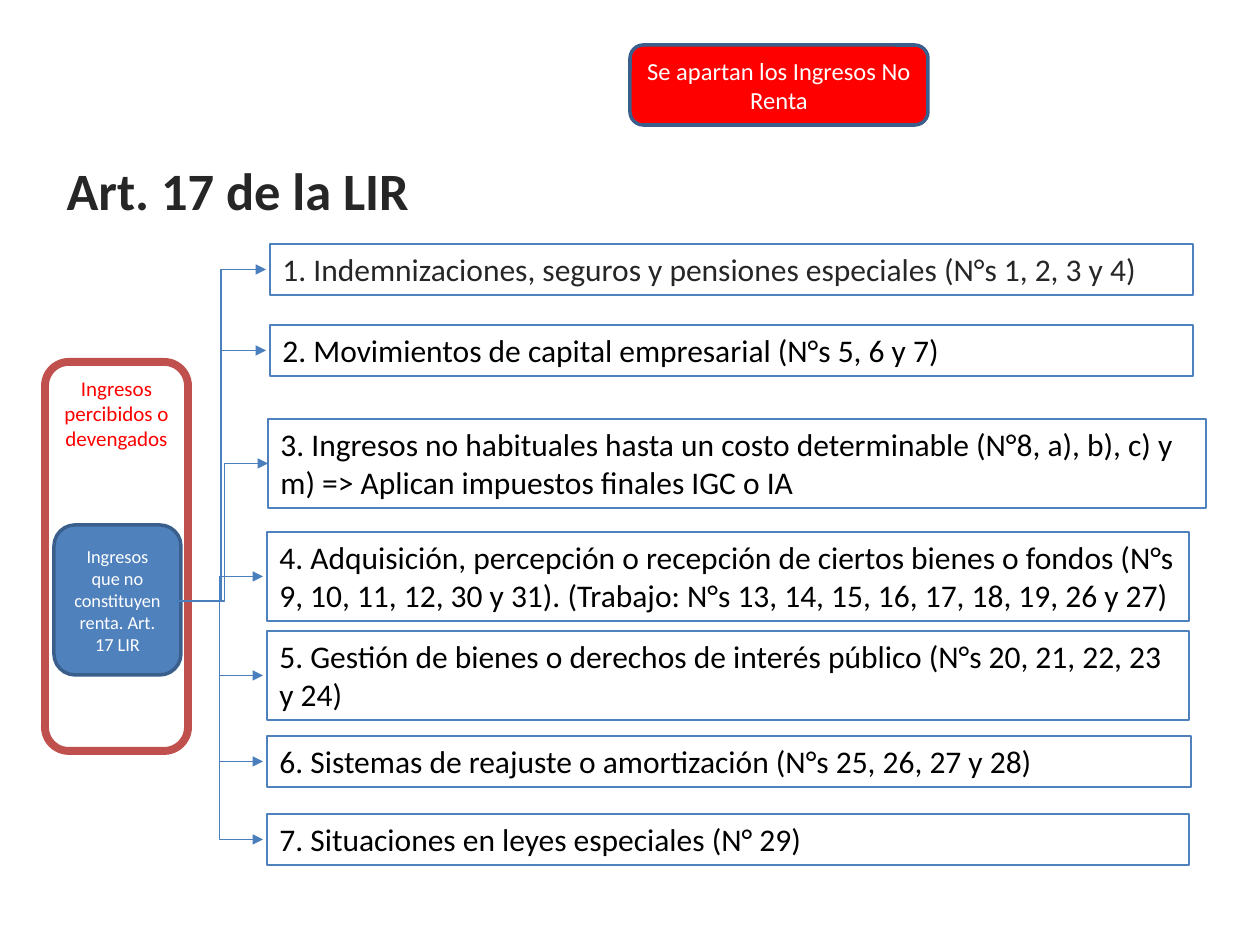
from lxml.etree import SubElement
from pptx import Presentation
from pptx.dml.color import RGBColor
from pptx.enum.shapes import MSO_CONNECTOR, MSO_SHAPE
from pptx.enum.text import MSO_ANCHOR, PP_ALIGN
from pptx.oxml.ns import qn
from pptx.util import Emu, Pt

PX = 914400 / 126
FONT = "Calibri"
COLORS = {
    "red": "FF0000", "brick": "C0504D", "blue": "4F81BD", "navy": "3A5F8C",
    "connector": "4B7EBC", "dark": "262626", "black": "000000", "white": "FFFFFF",
}

TITLE = "Art. 17 de la LIR"
TITLE_BOX = (54, 131, 835, 118)

# text, box, fill, line, line width, text colour, size, anchor
ROUNDED_BOXES = [
    ("Se apartan los Ingresos No Renta", (630, 45, 298, 80),
     "red", "navy", 2, "white", 14, MSO_ANCHOR.MIDDLE),
    ("Ingresos percibidos o devengados", (45, 362, 143, 389),
     None, "brick", 4.5, "red", 12, MSO_ANCHOR.TOP),
    ("Ingresos que no constituyen renta. Art. 17 LIR", (54, 525, 127, 150),
     "blue", "navy", 2, "white", 10.5, MSO_ANCHOR.MIDDLE),
]

# text, box, text colour, connector start x, gap before the box
ITEMS = [
    ("1. Indemnizaciones, seguros y pensiones especiales (N°s 1, 2, 3 y 4)",
     (270, 244, 923, 51), "dark", 176, 4),
    ("2. Movimientos de capital empresarial (N°s 5, 6 y 7)",
     (270, 325, 923, 51), "black", 176, 4),
    ("3. Ingresos no habituales hasta un costo determinable (N°8, a), b), c) y m) "
     "=> Aplican impuestos finales IGC o IA",
     (268, 419, 938, 89), "black", 181, 0),
    ("4. Adquisición, percepción o recepción de ciertos bienes o fondos "
     "(N°s 9, 10, 11, 12, 30 y 31). "
     "(Trabajo: N°s 13, 14, 15, 16, 17, 18, 19, 26 y 27)",
     (267, 532, 922, 89), "black", 176, 4),
    ("5. Gestión de bienes o derechos de interés público (N°s 20, 21, 22, 23 y 24)",
     (267, 631, 922, 89), "black", 176, 4),
    ("6. Sistemas de reajuste o amortización (N°s 25, 26, 27 y 28)",
     (267, 736, 924, 51), "black", 176, 4),
    ("7. Situaciones en leyes especiales (N° 29)",
     (267, 814, 922, 51), "black", 176, 4),
]
SOURCE_Y = 601


def px(value):
    return Emu(round(value * PX))


def rgb(name):
    return RGBColor.from_string(COLORS[name])


def write(shape, text, size, color, align, anchor, bold=False):
    frame = shape.text_frame
    frame.word_wrap = True
    frame.vertical_anchor = anchor
    paragraph = frame.paragraphs[0]
    paragraph.alignment = align
    run = paragraph.add_run()
    run.text = text
    run.font.name = FONT
    run.font.size = Pt(size)
    run.font.bold = bold
    run.font.color.rgb = rgb(color)


def add_box(slide, kind, box, fill, line, width):
    shape = slide.shapes.add_shape(kind, *map(px, box))
    shape.shadow.inherit = False
    if fill:
        shape.fill.solid()
        shape.fill.fore_color.rgb = rgb(fill)
    else:
        shape.fill.background()
    shape.line.color.rgb = rgb(line)
    shape.line.width = Pt(width)
    return shape


def add_elbow_arrow(slide, start_x, start_y, end_x, end_y):
    arrow = slide.shapes.add_connector(
        MSO_CONNECTOR.ELBOW, px(start_x), px(start_y), px(end_x), px(end_y))
    arrow.line.color.rgb = rgb("connector")
    arrow.line.width = Pt(0.75)
    SubElement(arrow.line._get_or_add_ln(), qn("a:tailEnd"), type="triangle")
    SubElement(arrow._element.spPr, qn("a:effectLst"))


def main():
    presentation = Presentation()
    presentation.slide_width = px(1260)
    presentation.slide_height = px(945)
    slide = presentation.slides.add_slide(presentation.slide_layouts[5])

    title = slide.shapes.title
    title.left, title.top, title.width, title.height = map(px, TITLE_BOX)
    write(title, TITLE, 30, "dark", PP_ALIGN.LEFT, MSO_ANCHOR.MIDDLE, bold=True)

    for text, box, fill, line, width, color, size, anchor in ROUNDED_BOXES:
        shape = add_box(slide, MSO_SHAPE.ROUNDED_RECTANGLE, box, fill, line, width)
        write(shape, text, size, color, PP_ALIGN.CENTER, anchor)

    for text, box, color, start_x, gap in ITEMS:
        shape = add_box(slide, MSO_SHAPE.RECTANGLE, box, None, "blue", 0.75)
        write(shape, text, 18, color, PP_ALIGN.LEFT, MSO_ANCHOR.TOP)
        left, top, _, height = box
        add_elbow_arrow(slide, start_x, SOURCE_Y, left - gap, top + height / 2)

    presentation.save("out.pptx")


if __name__ == "__main__":
    main()
